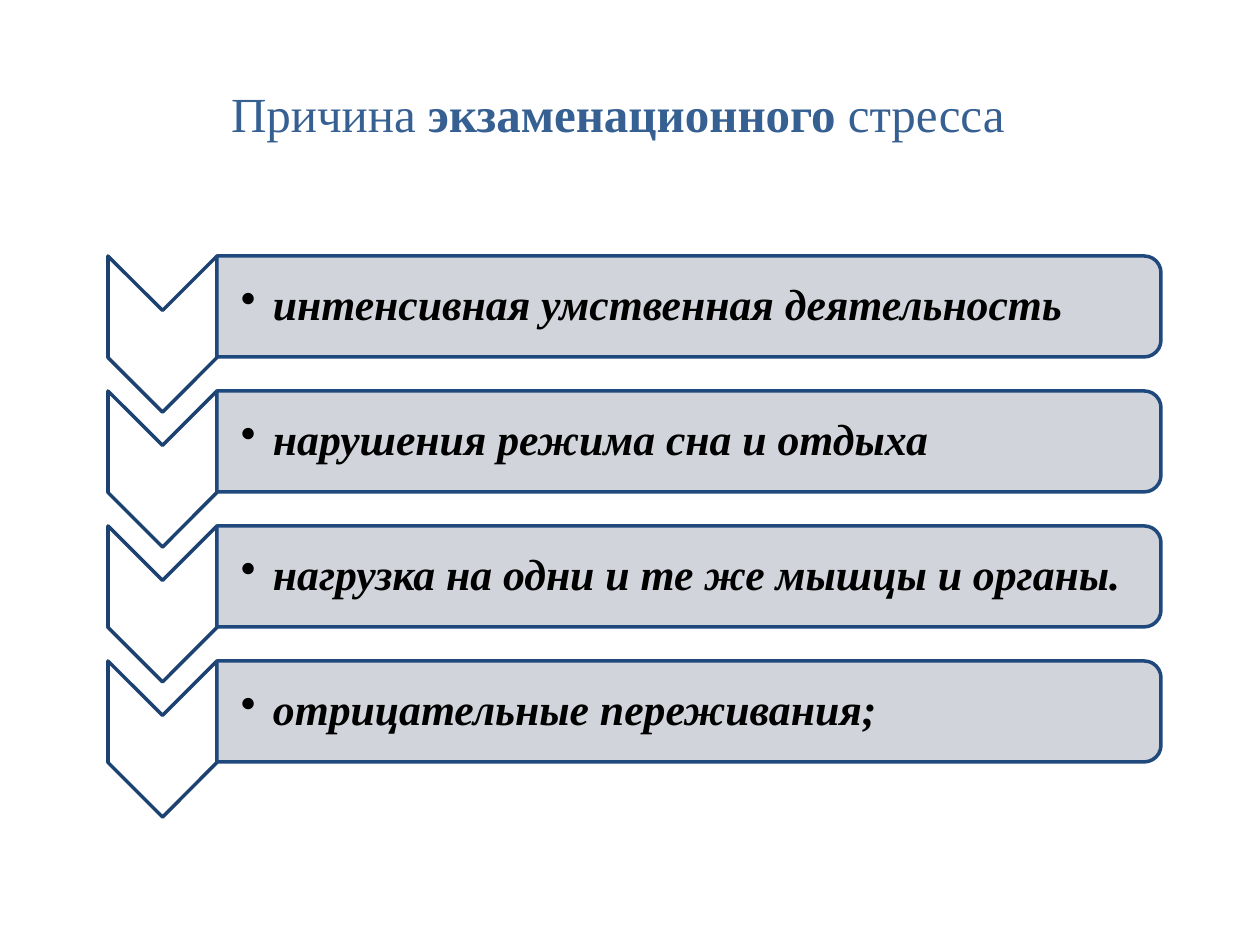
from lxml import etree
from pptx import Presentation
from pptx.dml.color import RGBColor
from pptx.enum.shapes import MSO_SHAPE
from pptx.enum.text import MSO_ANCHOR, MSO_AUTO_SIZE, PP_ALIGN
from pptx.oxml.ns import qn
from pptx.util import Emu, Pt

CHEVRON = MSO_SHAPE.CHEVRON
PANEL = MSO_SHAPE.ROUND_2_SAME_RECTANGLE
TOP, MIDDLE = MSO_ANCHOR.TOP, MSO_ANCHOR.MIDDLE
CENTER, LEFT = PP_ALIGN.CENTER, PP_ALIGN.LEFT
FIXED = MSO_AUTO_SIZE.NONE

CAUSES = [
    "интенсивная умственная деятельность",
    "нарушения режима сна и отдыха",
    "нагрузка на одни и те же мышцы и органы.",
    "отрицательные переживания;",
]
FIRST, STEP = 256, 135


def px(n):
    return Emu(round(n * 914400 / 126))


def color(code):
    return RGBColor.from_string(code)


def write(para, text, size=25, ink="000000", bold=False, italic=False):
    run = para.add_run()
    run.text = text
    font = run.font
    font.name, font.size = "Times New Roman", Pt(size)
    font.bold, font.italic = bold, italic
    font.color.rgb = color(ink)


class Deck:
    ink = "376092"
    fill = "CDD0D7"
    edge = "1F497D"
    dark = "1C4271"

    def __init__(self):
        self.file = Presentation()
        self.file.slide_width, self.file.slide_height = px(1260), px(945)
        self.slide = self.file.slides.add_slide(self.file.slide_layouts[5])

    def frame(self, shape, anchor, pad):
        """Set the text frame's insets in px (left, top, right, bottom)."""
        frame = shape.text_frame
        frame.word_wrap, frame.auto_size = True, FIXED
        frame.vertical_anchor = anchor
        (frame.margin_left, frame.margin_top,
         frame.margin_right, frame.margin_bottom) = map(px, pad)
        return frame.paragraphs[0]

    def title(self, parts, x, y, w, h):
        shape = self.slide.shapes.title
        shape.left, shape.top, shape.width, shape.height = map(px, (x, y, w, h))
        para = self.frame(shape, TOP, (13, 6, 13, 6))
        para.alignment = CENTER
        for text, bold in parts:
            write(para, text, size=28, ink=self.ink, bold=bold)

    def turned(self, kind, x, y, w, h, fill, line, alpha=100):
        """Add a shape turned by 90 degrees that covers the given box."""
        shift = (w - h) / 2
        box = map(px, (x + shift, y - shift, h, w))
        shape = self.slide.shapes.add_shape(kind, *box)
        shape.rotation = 90
        shape.shadow.inherit = False
        shape.fill.solid()
        shape.fill.fore_color.rgb = color(fill)
        shape.line.color.rgb = color(line)
        shape.line.width = Pt(2)
        if alpha < 100:
            tone = shape.fill._xPr.find(qn("a:solidFill"))[0]
            etree.SubElement(tone, qn("a:alpha"), val=str(alpha * 1000))

    def bullet(self, text, x, y, w, h):
        shape = self.slide.shapes.add_textbox(*map(px, (x, y, w, h)))
        para = self.frame(shape, MIDDLE, (24, 3, 3, 3))
        para.level, para.alignment, para.line_spacing = 1, LEFT, 0.9
        write(para, text, bold=True, italic=True)
        props = para._p.get_or_add_pPr()
        props.set("marL", str(px(32)))
        props.set("indent", str(px(-32)))
        etree.SubElement(props, qn("a:buChar"), char="•")

    def cause(self, text, y):
        self.turned(CHEVRON, 108, y, 109, 156, "FFFFFF", self.dark)
        self.turned(PANEL, 217, y, 944, 101, self.fill, self.edge, alpha=90)
        self.bullet(text, 217, y + 5, 940, 91)


def main():
    deck = Deck()
    deck.title([("Причина ", False), ("экзаменационного", True),
                (" стресса ", False)], 158, 78, 932, 71)
    for row, text in enumerate(CAUSES):
        deck.cause(text, FIRST + row * STEP)
    deck.file.save("out.pptx")


if __name__ == "__main__":
    main()
